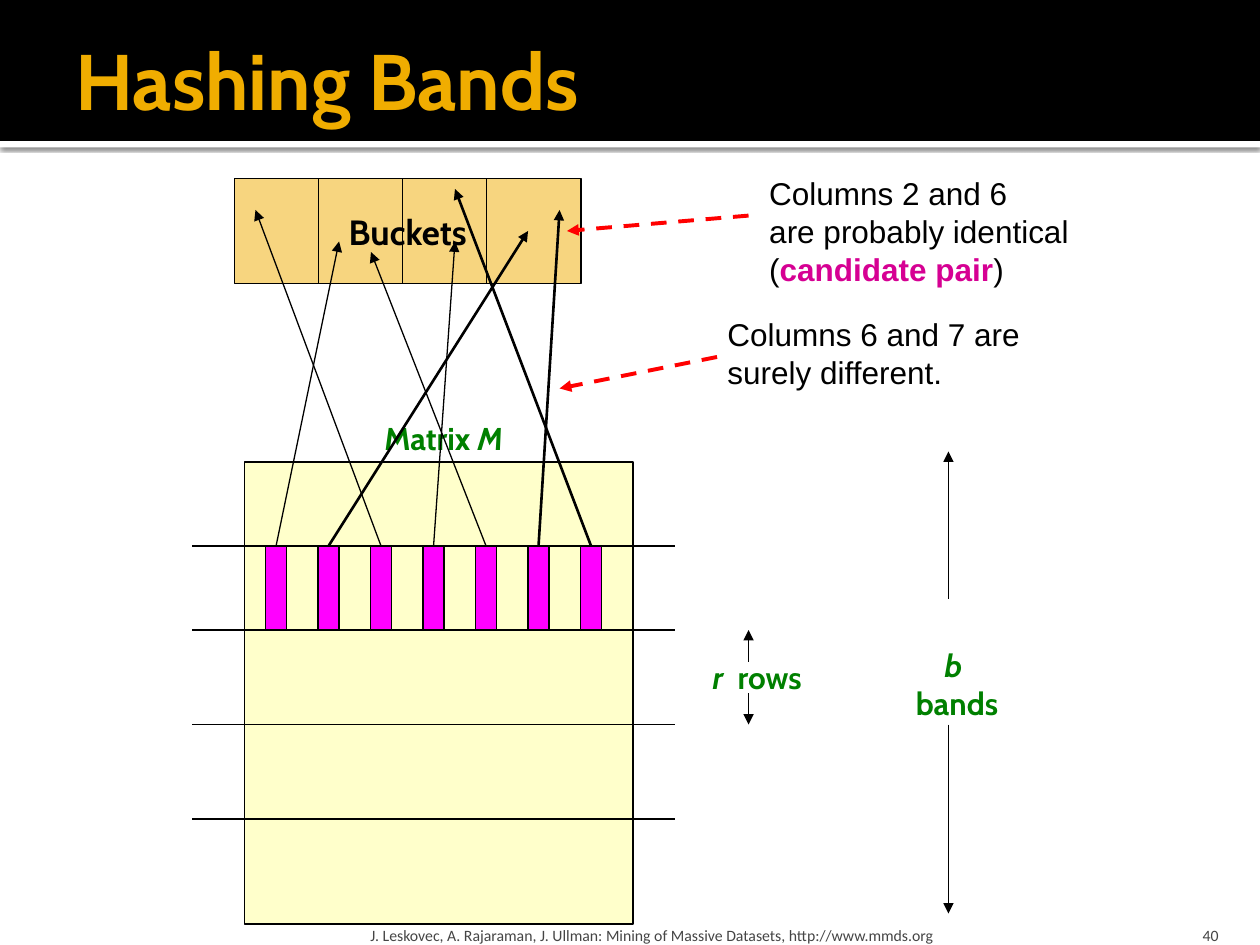
from dataclasses import dataclass
from typing import Optional

import pptx
import pptx.dml.color
import pptx.enum.dml
import pptx.enum.shapes
import pptx.enum.text
import pptx.oxml
import pptx.oxml.ns
import pptx.util

Pt = pptx.util.Pt
ALIGN = pptx.enum.text.PP_ALIGN
ANCHOR = pptx.enum.text.MSO_ANCHOR
BLACK, WHITE, GOLD, GREEN, GREY = "000000", "FFFFFF", "F0AD00", "008000", "454545"
DRAWING_NS = pptx.oxml.ns.nsdecls("a")


@dataclass
class Run:
    text: str
    italic: bool = False
    bold: Optional[bool] = None
    color: Optional[str] = None


@dataclass
class Line:
    start: tuple
    end: tuple
    width: float = 0.75
    color: str = BLACK
    arrow: bool = False
    dashed: bool = False


@dataclass
class Label:
    box: tuple
    paragraphs: list
    style: dict


@dataclass
class HashArrow:
    column: int
    target: tuple
    width: float = 0.75


def rgb(value: str):
    return pptx.dml.color.RGBColor.from_string(value)


def write(frame, paragraphs, *, size=18, font="Cabin", color=GREEN, bold=False,
          align=ALIGN.LEFT, anchor=ANCHOR.TOP, wrap=False, insets=(7.2, 3.6, 7.2, 3.6)):
    frame.word_wrap = wrap
    frame.vertical_anchor = anchor
    frame.margin_left, frame.margin_top, frame.margin_right, frame.margin_bottom = map(Pt, insets)
    for index, runs in enumerate(paragraphs):
        paragraph = frame.add_paragraph() if index else frame.paragraphs[0]
        paragraph.alignment = align
        for part in runs:
            run = paragraph.add_run()
            run.text = part.text
            run.font.name = font
            run.font.size = Pt(size)
            run.font.bold = bold if part.bold is None else part.bold
            run.font.italic = part.italic
            run.font.color.rgb = rgb(part.color or color)


def add_rect(slide, box: tuple, fill: str, outlined: bool = True, opacity: int = 100):
    rect = slide.shapes.add_shape(pptx.enum.shapes.MSO_SHAPE.RECTANGLE, *map(Pt, box))
    rect.shadow.inherit = False
    rect.fill.solid()
    rect.fill.fore_color.rgb = rgb(fill)
    if opacity < 100:
        color = rect._element.spPr.find(".//" + pptx.oxml.ns.qn("a:srgbClr"))
        color.append(pptx.oxml.parse_xml(f'<a:alpha {DRAWING_NS} val="{opacity * 1000}"/>'))
    if outlined:
        rect.line.color.rgb = rgb(BLACK)
        rect.line.width = Pt(0.75)
    else:
        rect.line.fill.background()
    return rect


def add_line(slide, line: Line):
    connector = slide.shapes.add_connector(
        pptx.enum.shapes.MSO_CONNECTOR.STRAIGHT, *map(Pt, line.start + line.end))
    connector.line.color.rgb = rgb(line.color)
    connector.line.width = Pt(line.width)
    if line.dashed:
        connector.line.dash_style = pptx.enum.dml.MSO_LINE.DASH
    if line.arrow:
        connector.line._get_or_add_ln().append(
            pptx.oxml.parse_xml(f'<a:tailEnd {DRAWING_NS} type="triangle"/>'))
    connector._element.spPr.append(pptx.oxml.parse_xml(f"<a:effectLst {DRAWING_NS}/>"))
    return connector


def add_label(slide, label: Label):
    textbox = slide.shapes.add_textbox(*map(Pt, label.box))
    write(textbox.text_frame, label.paragraphs, **label.style)


def add_header(slide):
    strip = add_rect(slide, (0, 80.6, 720, 3.6), WHITE, outlined=False)
    strip._element.spPr.find(pptx.oxml.ns.qn("a:effectLst")).append(pptx.oxml.parse_xml(
        f'<a:outerShdw {DRAWING_NS} blurRad="{Pt(2.5)}" dist="{Pt(0.8)}" dir="5400000" '
        'algn="tl" rotWithShape="0"><a:srgbClr val="000000"><a:alpha val="60000"/>'
        "</a:srgbClr></a:outerShdw>"))
    add_rect(slide, (0, 0, 720, 80.6), BLACK, outlined=False)


GREEN_STYLE = dict(bold=True, align=ALIGN.CENTER)
NOTE_STYLE = dict(font="Arial", color=BLACK)
FOOTER_STYLE = dict(size=9, font="Calibri", color=GREY, anchor=ANCHOR.BOTTOM, wrap=True)

MATRIX_LABELS = [
    Label((211, 236, 85, 29), [[Run("Matrix "), Run("M", italic=True)]], GREEN_STYLE),
    Label((399.6, 372.2, 66.2, 29), [[Run("r ", italic=True), Run(" rows")]], GREEN_STYLE),
    Label((507.6, 365.8, 78.5, 50), [[Run("b ", italic=True)], [Run("bands")]], GREEN_STYLE),
]
EXTENT_ARROWS = [
    Line((427.75, 378), (427.75, 360), arrow=True),
    Line((427.75, 396), (427.75, 414), arrow=True),
    Line((542, 342), (542, 258), arrow=True),
    Line((542, 414), (542, 522), arrow=True),
]
HASH_ARROWS = [
    HashArrow(1, (193.75, 138)),
    HashArrow(2, (301.75, 132), 1.5),
    HashArrow(3, (146, 120)),
    HashArrow(4, (260, 138)),
    HashArrow(5, (212, 144)),
    HashArrow(6, (319.75, 120), 1.5),
    HashArrow(7, (260, 108), 1.5),
]
NOTES = [
    Label((432.5, 96, 191.5, 72),
          [[Run("Columns 2 and 6")], [Run("are probably identical")],
           [Run("("), Run("candidate pair", bold=True, color="D60093"), Run(")")]], NOTE_STYLE),
    Label((408.6, 176.5, 183, 51),
          [[Run("Columns 6 and 7 are")], [Run("surely different.")]], NOTE_STYLE),
]
NOTE_ARROWS = [
    Line((427.75, 123.2), (324, 132), 2.25, "FF0000", arrow=True, dashed=True),
    Line((409.75, 204), (319.75, 222), 2.25, "FF0000", arrow=True, dashed=True),
]
TITLE_AND_FOOTER = [
    Label((36, 12.2, 648, 66.2), [[Run("Hashing Bands")]],
          dict(size=45, color=GOLD, bold=True, anchor=ANCHOR.MIDDLE, wrap=True,
               insets=(7.2, 3.6, 3.6, 3.6))),
    Label((208, 518.4, 433.5, 21.6),
          [[Run("J. Leskovec, A. Rajaraman, J. Ullman: Mining of Massive Datasets, "
                "http://www.mmds.org")]],
          dict(FOOTER_STYLE, insets=(3.6, 3.6, 3.6, 0))),
    Label((645.8, 518.4, 57.6, 21.6), [[Run("40")]],
          dict(FOOTER_STYLE, align=ALIGN.RIGHT, insets=(7.2, 3.6, 7.2, 0))),
]


def main():
    deck = pptx.Presentation()
    deck.slide_width, deck.slide_height = Pt(720), Pt(540)
    slide = deck.slides.add_slide(deck.slide_layouts[6])
    add_header(slide)

    add_rect(slide, (139.75, 264, 222, 264), "FFFF99", opacity=50)
    for label in MATRIX_LABELS:
        add_label(slide, label)
    for band_edge in (312, 360, 414, 468):
        add_line(slide, Line((110, band_edge), (386, band_edge)))
    for arrow in EXTENT_ARROWS:
        add_line(slide, arrow)
    columns = [add_rect(slide, (151.75 + 30 * i, 312, 12, 48), "FF00FF") for i in range(7)]

    buckets = add_rect(slide, (134, 102, 198, 60), GOLD, opacity=50)
    write(buckets.text_frame, [[Run("Buckets")]], size=20, color=BLACK, bold=True,
          align=ALIGN.CENTER, anchor=ANCHOR.MIDDLE)
    for i in range(3):
        divider = 182 + 48 * i
        add_line(slide, Line((divider, 102), (divider, 162)))
    for arrow in HASH_ARROWS:
        top = (157.75 + 30 * (arrow.column - 1), 312)
        connector = add_line(slide, Line(top, arrow.target, arrow.width, arrow=True))
        connector.begin_connect(columns[arrow.column - 1], 0)

    for note, arrow in zip(NOTES, NOTE_ARROWS):
        add_label(slide, note)
        add_line(slide, arrow)
    for label in TITLE_AND_FOOTER:
        add_label(slide, label)
    deck.save("out.pptx")


if __name__ == "__main__":
    main()
